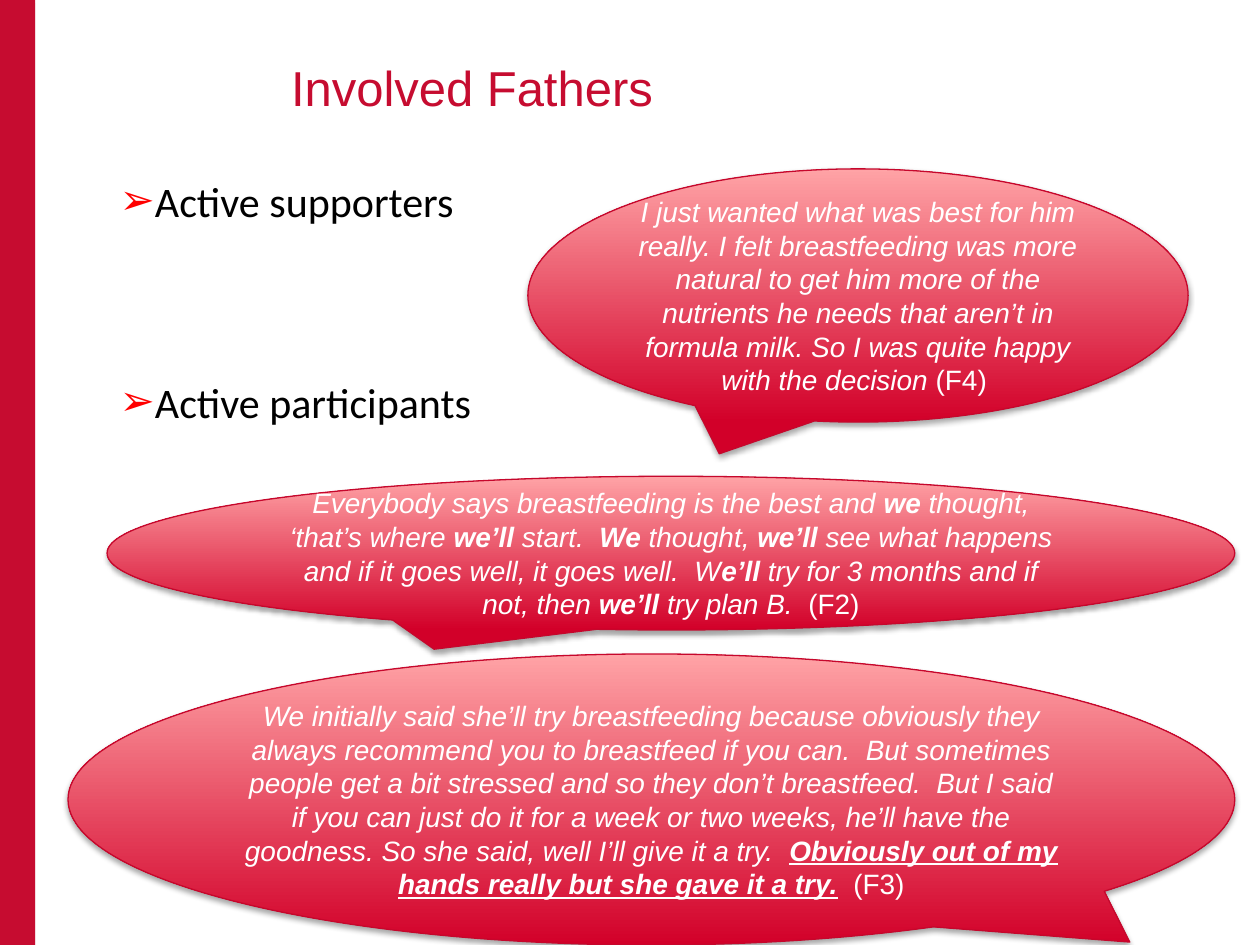
"""Build the Involved Fathers slide with two bullets and three quotations."""
from lxml import etree
from pptx import Presentation
from pptx import util as u
from pptx.dml.color import RGBColor
from pptx.enum import shapes, text
from pptx.oxml.ns import qn

COLORS = {"brand": "C60C30", "outline": "C6072C", "deep": "D20029", "pale": "FFA3A6",
          "arrow": "FF0000", "black": "000000", "white": "FFFFFF", "gray": "808080"}
TITLE = "Involved Fathers"
ROLES = ["Active supporters", "Active participants"]
ROLE_GAP = 86
QUOTES = [
    {"at": (4.19, 1.34, 5.24, 2.01), "tail": (-0.21, 0.625), "inset": (0.1, 0.05), "runs": [
        ("I just wanted what was best for him really. I felt breastfeeding was more natural "
         "to get him more of the nutrients he needs that aren’t in formula milk. So I was "
         "quite happy with the decision ", "i"),
        ("(F4) ", "")]},
    {"at": (0.85, 3.78, 8.95, 1.22), "tail": (-0.21, 0.625), "inset": (0.1, 0.05), "runs": [
        ("Everybody says breastfeeding is the best and ", "i"),
        ("we", "bi"),
        (" thought, ‘that’s where ", "i"),
        ("we’ll", "bi"),
        (" start.  ", "i"),
        ("We ", "bi"),
        ("thought, ", "i"),
        ("we’ll ", "bi"),
        ("see what happens and if it goes well, it goes well.  W", "i"),
        ("e’ll", "bi"),
        (" try for 3 months and if not, then ", "i"),
        ("we’ll", "bi"),
        (" try plan B.  ", "i"),
        ("(F2)", "")]},
    {"at": (0.54, 5.19, 9.26, 2.31), "tail": (0.41, 0.49), "inset": (0.02, 0.01), "runs": [
        ("We initially said she’ll try breastfeeding because obviously they always recommend "
         "you to breastfeed if you can.  But sometimes people get a bit stressed and so they "
         "don’t breastfeed.  But I said if you can just do it for a week or two weeks, he’ll "
         "have the goodness. So she said, well I’ll give it a try.  ", "i"),
        ("Obviously out of my hands really but she gave it a try.", "biu"),
        ("  (F3)", "")]},
]


def rgb(name):
    """Return a palette colour."""
    return RGBColor.from_string(COLORS[name])


def place(shape, left, top, width, height):
    """Set a shape's position and size in inches."""
    shape.left, shape.top = u.Inches(left), u.Inches(top)
    shape.width, shape.height = u.Inches(width), u.Inches(height)


def add_run(paragraph, words, size, face, color, style=""):
    """Append a formatted run; style letters are b, i and u."""
    run = paragraph.add_run()
    run.text = words
    font = run.font
    font.size, font.name = u.Pt(size), face
    font.color.rgb = rgb(color)
    font.bold, font.italic, font.underline = ("b" in style, "i" in style, "u" in style)


def add_shadow(shape, color, blur):
    """Give a shape a soft shadow straight below it."""
    shape.shadow.inherit = False
    effects = shape._element.spPr.find(qn("a:effectLst"))
    shadow = etree.SubElement(effects, qn("a:outerShdw"), blurRad=str(u.Pt(blur)),
                              dist=str(u.Pt(1.8)), dir="5400000", rotWithShape="0")
    tint = etree.SubElement(shadow, qn("a:srgbClr"), val=COLORS[color])
    etree.SubElement(tint, qn("a:alpha"), val="35000")


def add_arrow_bullet(paragraph):
    """Give a paragraph a hanging red arrow bullet."""
    props = paragraph._p.get_or_add_pPr()
    indent = u.Inches(0.28)
    props.set("marL", str(indent))
    props.set("indent", str(-indent))
    tint = etree.SubElement(props, qn("a:buClr"))
    etree.SubElement(tint, qn("a:srgbClr"), val=COLORS["arrow"])
    etree.SubElement(props, qn("a:buChar"), char="➢")


def add_quote(slide, quote):
    """Draw one speech bubble with its quotation."""
    bubble = slide.shapes.add_shape(shapes.MSO_SHAPE.OVAL_CALLOUT,
                                    *map(u.Inches, quote["at"]))
    for index, offset in enumerate(quote["tail"]):
        bubble.adjustments[index] = offset
    bubble.fill.gradient()
    bubble.fill.gradient_angle = 90
    for stop, color in zip(bubble.fill.gradient_stops, ("deep", "pale")):
        stop.color.rgb = rgb(color)
    bubble.line.color.rgb = rgb("outline")
    bubble.line.width = u.Pt(0.75)
    add_shadow(bubble, "black", 3.1)
    frame = bubble.text_frame
    frame.word_wrap = True
    frame.vertical_anchor = text.MSO_ANCHOR.MIDDLE
    side, end = map(u.Inches, quote["inset"])
    frame.margin_left = frame.margin_right = side
    frame.margin_top = frame.margin_bottom = end
    saying = frame.paragraphs[0]
    saying.alignment = text.PP_ALIGN.CENTER
    for words, style in quote["runs"]:
        add_run(saying, words, 16, "Arial", "white", style)


def main():
    """Assemble and save the slide."""
    deck = Presentation()
    deck.slide_width, deck.slide_height = u.Inches(10), u.Inches(7.5)
    slide = deck.slides.add_slide(deck.slide_layouts[0])
    heading, roles = slide.placeholders
    place(heading, 2.21, 0.41, 6.88, 0.93)
    place(roles, 0.85, 1.34, 8.58, 6.03)
    for holder in (heading, roles):
        holder.text_frame.vertical_anchor = text.MSO_ANCHOR.TOP
        holder.text_frame.auto_size = text.MSO_AUTO_SIZE.NONE

    title = heading.text_frame.paragraphs[0]
    title.alignment = text.PP_ALIGN.LEFT
    add_run(title, TITLE, 28, "Arial", "brand")

    for index, role in enumerate(ROLES):
        frame = roles.text_frame
        item = frame.add_paragraph() if index else frame.paragraphs[0]
        add_arrow_bullet(item)
        item.alignment = text.PP_ALIGN.LEFT
        item.space_before = u.Pt(ROLE_GAP * index)
        add_run(item, role, 24, "Calibri", "black")

    band = slide.shapes.add_shape(shapes.MSO_SHAPE.RECTANGLE, 0, 0,
                                  u.Inches(0.28), deck.slide_height)
    band.fill.solid()
    band.fill.fore_color.rgb = rgb("brand")
    band.line.fill.background()
    add_shadow(band, "gray", 0)

    for quote in QUOTES:
        add_quote(slide, quote)
    deck.save("out.pptx")


if __name__ == "__main__":
    main()
